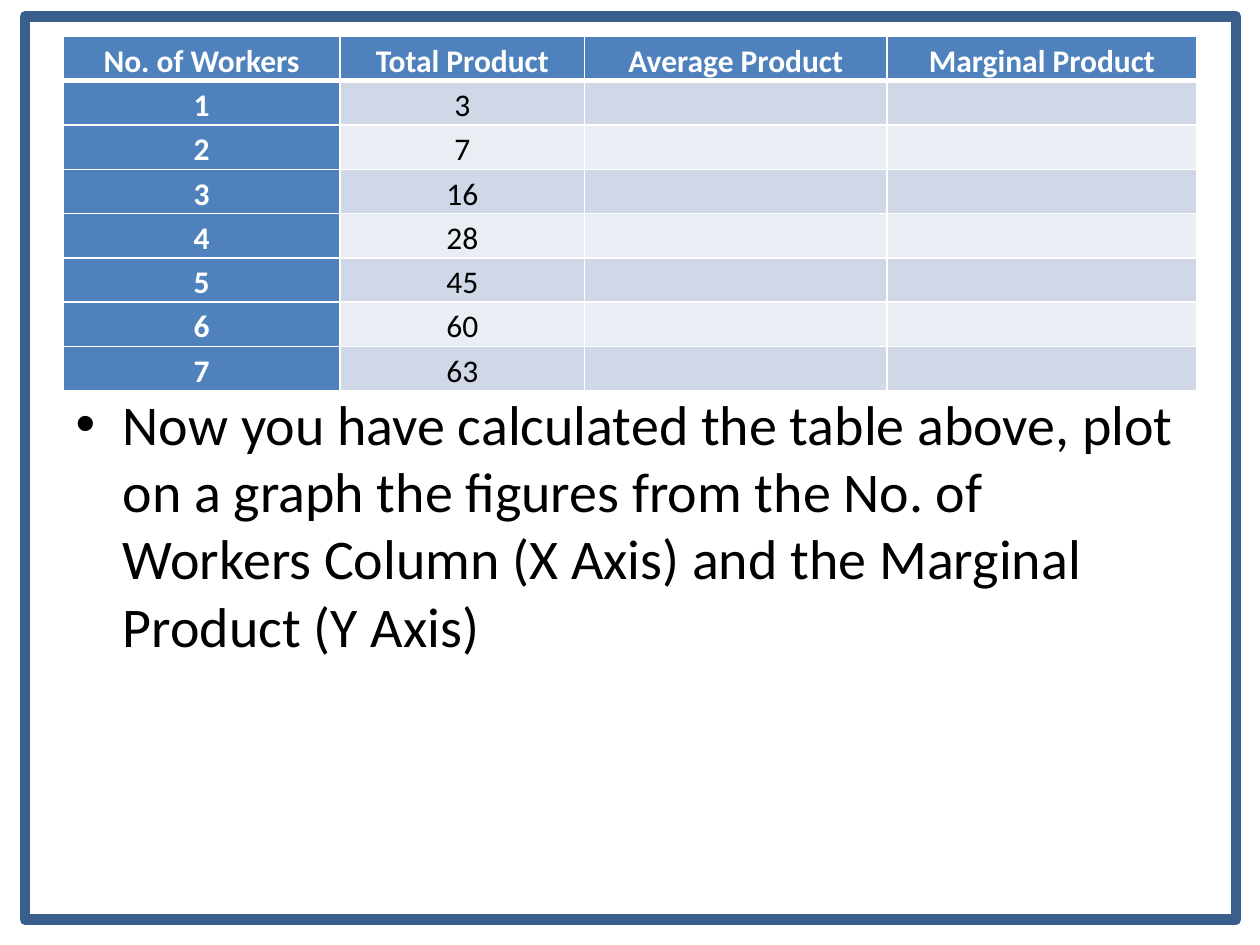
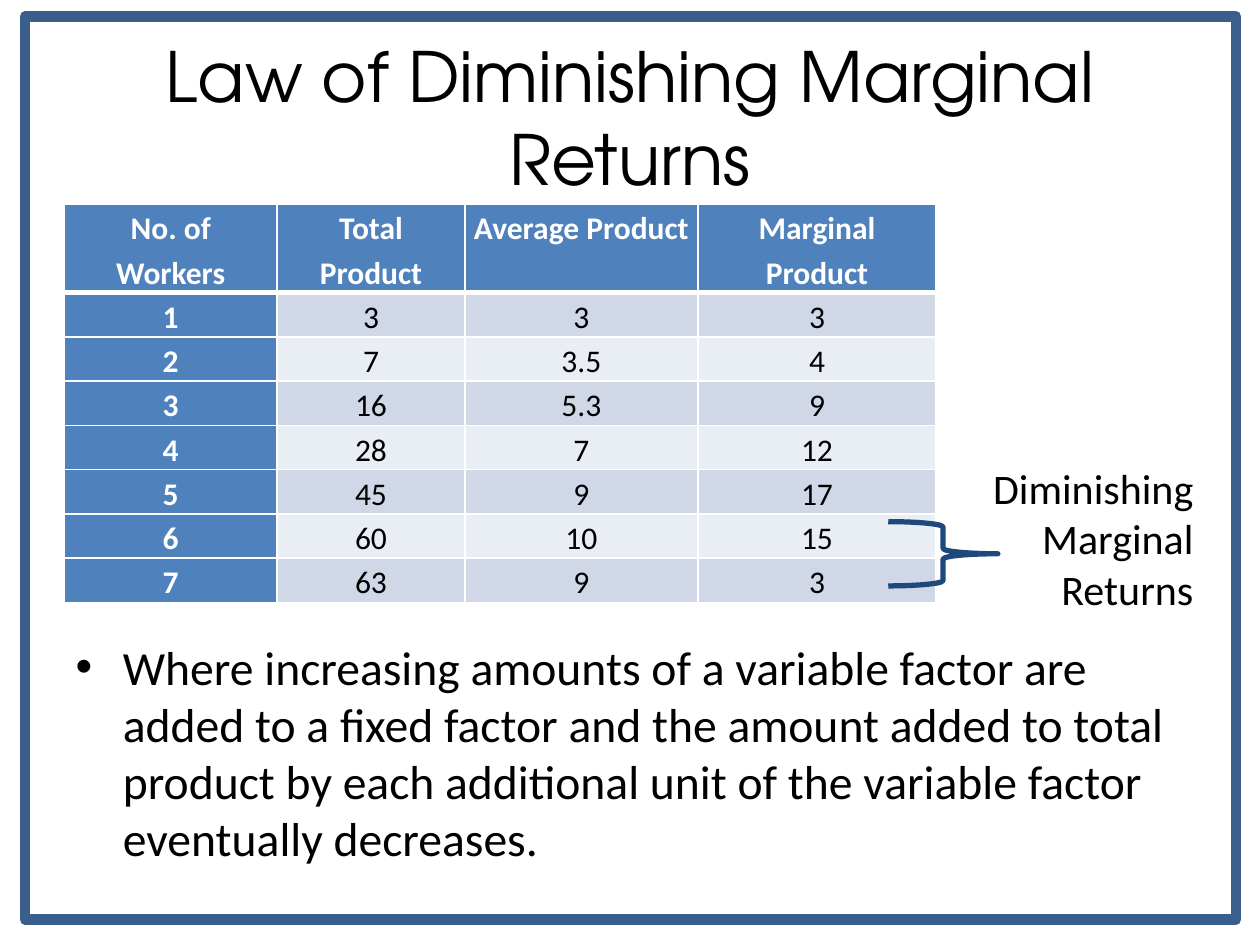
from lxml.etree import SubElement
from pptx import Presentation
from pptx.dml.color import RGBColor
from pptx.enum.shapes import MSO_SHAPE as Preset
from pptx.enum.text import MSO_ANCHOR as Anchor, MSO_AUTO_SIZE as AutoSize, PP_ALIGN as Align
from pptx.oxml.ns import qn
from pptx.util import Inches, Pt

BLACK = RGBColor(0x00, 0x00, 0x00)
WHITE = RGBColor(0xFF, 0xFF, 0xFF)
FRAME_BLUE = RGBColor(0x3A, 0x5F, 0x8C)
BRACE_BLUE = RGBColor(0x1F, 0x49, 0x7D)
HEADER_BLUE = RGBColor(0x4F, 0x81, 0xBD)
BAND_DARK = RGBColor(0xD0, 0xD8, 0xE8)
BAND_LIGHT = RGBColor(0xE9, 0xED, 0xF4)

TEXT_FONT = "Calibri"
TITLE_FONT = "TeX Gyre Adventor"
ROW_HEIGHT = 0.31
HEADINGS = ["No. of Workers", "Total Product", "Average Product", "Marginal Product"]
TOTAL_PRODUCT = [3, 7, 16, 28, 45, 60, 63]
AVERAGE_PRODUCT = ["3", "3.5", "5.3", "7", "9", "10", "9"]
MARGINAL_PRODUCT = [3, 4, 9, 12, 17, 15, 3]


class Deck:
    def __init__(self):
        self.presentation = Presentation()
        self.presentation.slide_width = Inches(10)
        self.presentation.slide_height = Inches(7.5)
        self.slide = None

    def new_slide(self):
        self.slide = self.presentation.slides.add_slide(self.presentation.slide_layouts[1])
        self.outline(Preset.RECTANGLE, (0.2, 0.13, 9.61, 7.17), FRAME_BLUE, 6)

    def outline(self, preset, box, color, weight):
        outlined = self.slide.shapes.add_shape(preset, *map(Inches, box))
        outlined.shadow.inherit = False
        outlined.fill.background()
        outlined.line.color.rgb = color
        outlined.line.width = Pt(weight)

    def styled_run(self, paragraph, text, size, color=BLACK, font=TEXT_FONT, bold=False):
        run = paragraph.add_run()
        run.text = text
        run.font.size = Pt(size)
        run.font.name = font
        run.font.bold = bold
        run.font.color.rgb = color

    def place(self, holder, box):
        holder.left, holder.top, holder.width, holder.height = map(Inches, box)
        holder.text_frame.word_wrap = True
        holder.text_frame.auto_size = AutoSize.NONE
        return holder.text_frame.paragraphs[0]

    def title(self, text):
        heading = self.slide.shapes.title
        paragraph = self.place(heading, (0.5, 0.3, 9, 1.25))
        heading.text_frame.vertical_anchor = Anchor.MIDDLE
        paragraph.alignment = Align.CENTER
        self.styled_run(paragraph, text, 39.6, font=TITLE_FONT)

    def no_title(self):
        heading = self.slide.shapes.title.element
        heading.getparent().remove(heading)

    def bullet(self, text, box, size):
        self.styled_run(self.place(self.slide.placeholders[1], box), text, size)

    def label(self, text, box, size):
        note = self.slide.shapes.add_textbox(*map(Inches, box))
        paragraph = self.place(note, box)
        note.text_frame.auto_size = AutoSize.SHAPE_TO_FIT_TEXT
        paragraph.alignment = Align.RIGHT
        self.styled_run(paragraph, text, size)

    def border(self, cell, row):
        weights = {"lnL": 1, "lnR": 1, "lnT": 3 if row == 1 else 1, "lnB": 3 if row == 0 else 1}
        for side, weight in weights.items():
            edge = SubElement(cell._tc.get_or_add_tcPr(), qn(f"a:{side}"), w=str(Pt(weight)))
            SubElement(SubElement(edge, qn("a:solidFill")), qn("a:srgbClr"), val=str(WHITE))

    def fill_cell(self, cell, text, row, column):
        is_heading = row == 0 or column == 0
        self.border(cell, row)
        cell.fill.solid()
        band = BAND_DARK if row % 2 else BAND_LIGHT
        cell.fill.fore_color.rgb = HEADER_BLUE if is_heading else band
        cell.margin_left = cell.margin_right = Inches(0.07)
        cell.margin_top = cell.margin_bottom = 0
        paragraph = cell.text_frame.paragraphs[0]
        paragraph.alignment = Align.CENTER
        paragraph.line_spacing = 1.15
        if text:
            color = WHITE if is_heading else BLACK
            self.styled_run(paragraph, text, 18, color, bold=is_heading)

    def product_table(self, left, top, widths, average, marginal):
        workers = range(1, len(TOTAL_PRODUCT) + 1)
        rows = [HEADINGS, *zip(workers, TOTAL_PRODUCT, average, marginal)]
        box = (left, top, sum(widths), ROW_HEIGHT * len(rows))
        table = self.slide.shapes.add_table(len(rows), len(widths), *map(Inches, box)).table
        for column, width in zip(table.columns, widths):
            column.width = Inches(width)
        for r, values in enumerate(rows):
            for c, value in enumerate(values):
                self.fill_cell(table.cell(r, c), str(value), r, c)


def main():
    deck = Deck()
    blanks = [""] * len(TOTAL_PRODUCT)

    deck.new_slide()
    deck.no_title()
    deck.bullet(
        "Now you have calculated the table above, plot on a graph the figures from the "
        "No. of Workers Column (X Axis) and the Marginal Product (Y Axis)",
        (0.5, 3.04, 9, 3.66), 32)
    deck.product_table(0.5, 0.29, [2.2, 1.94, 2.4, 2.46], blanks, blanks)

    deck.new_slide()
    deck.title("Law of Diminishing Marginal Returns")
    deck.bullet(
        "Where increasing amounts of a variable factor are added to a fixed factor and the "
        "amount added to total product by each additional unit of the variable factor "
        "eventually decreases.",
        (0.5, 5.01, 9, 1.69), 27.2)
    deck.product_table(0.51, 1.62, [1.69, 1.49, 1.85, 1.89], AVERAGE_PRODUCT, MARGINAL_PRODUCT)
    deck.outline(Preset.RIGHT_BRACE, (7.05, 4.14, 0.87, 0.51), BRACE_BLUE, 3)
    deck.label("Diminishing Marginal Returns", (7.68, 3.62, 1.89, 1.31), 24)

    deck.presentation.save("out.pptx")


if __name__ == "__main__":
    main()
